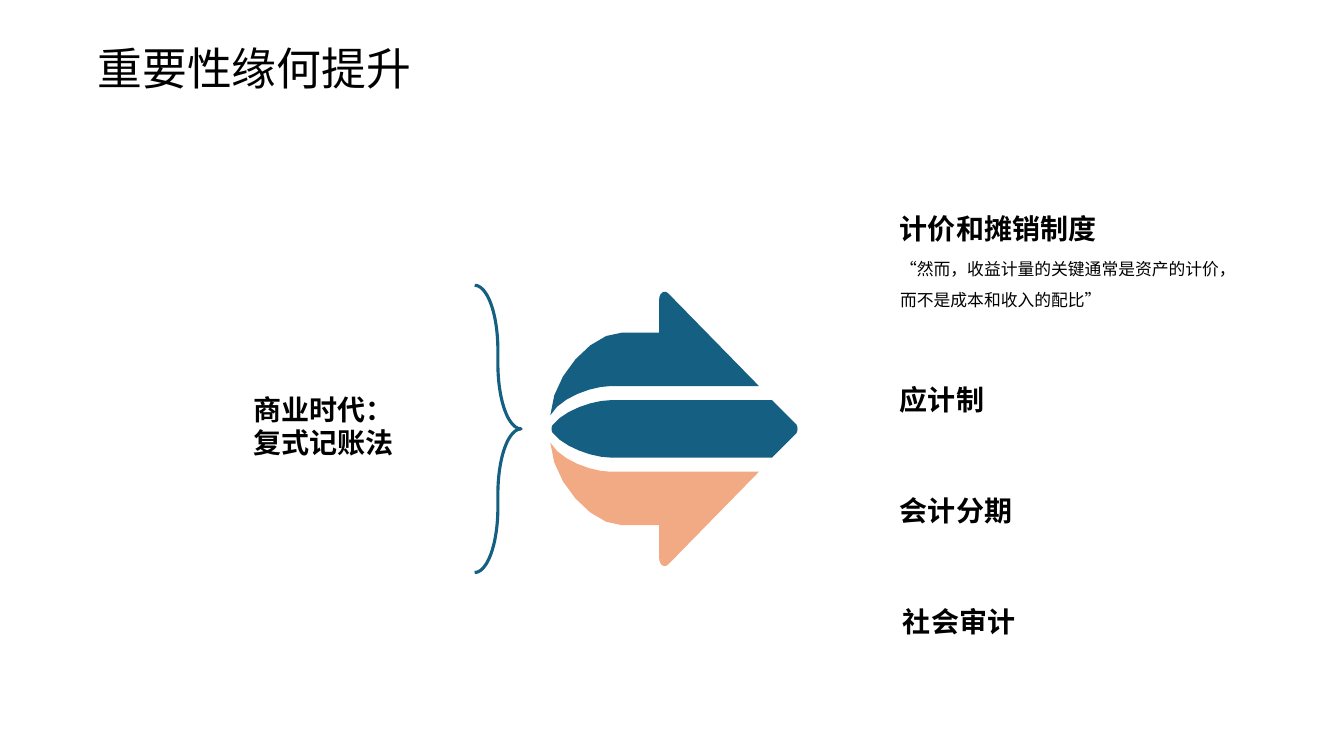
from lxml import etree
from pptx import Presentation
from pptx import util as u
from pptx.dml.color import RGBColor
from pptx.enum import shapes, text
from pptx.oxml import ns

BLUE, PEACH, BLACK = "156082", "F2AA84", "000000"
CURVE_STEPS = 6


def rgb(value):
    return RGBColor.from_string(value)


def outline(start, *steps):
    """Turn points (lines) and point triples (Bezier curves) into a list of points."""
    points = [start]
    for step in steps:
        if not isinstance(step[0], tuple):
            points.append(step)
            continue
        p0, (p1, p2, p3) = points[-1], step
        for i in range(1, CURVE_STEPS + 1):
            t = i / CURVE_STEPS
            points.append(tuple(
                (1 - t) ** 3 * a + 3 * (1 - t) ** 2 * t * b
                + 3 * (1 - t) * t ** 2 * c + t ** 3 * d
                for a, b, c, d in zip(p0, p1, p2, p3)))
    return points


def mirror(points, axis):
    return [(x, 2 * axis - y) for x, y in points]


class Page:
    font = "Noto Sans CJK SC"

    def __init__(self, prs):
        self.s = prs.slides.add_slide(prs.slide_layouts[6])

    def text(self, lines, x, y, w, h, size=20, bold=True, align=text.PP_ALIGN.LEFT,
             anchor=text.MSO_ANCHOR.MIDDLE, insets=(0.1, 0.05), spacing=None, gap=None):
        sp = self.s.shapes.add_textbox(*map(u.Inches, (x, y, w, h)))
        tf = sp.text_frame
        tf.word_wrap = True
        tf.vertical_anchor = anchor
        tf.margin_left = tf.margin_right = u.Inches(insets[0])
        tf.margin_top = tf.margin_bottom = u.Inches(insets[1])
        tf.text = "\n".join(lines)
        for p in tf.paragraphs:
            p.alignment = align
            if spacing:
                p.line_spacing = spacing
            if gap:
                p.space_before = p.space_after = u.Pt(gap)
            p.font.size = u.Pt(size)
            p.font.bold = bold
            p.font.name = self.font
            p.font.color.rgb = rgb(BLACK)
            # East Asian typeface
            props = p._p.pPr.find(ns.qn("a:defRPr"))
            etree.SubElement(props, ns.qn("a:ea")).set("typeface", self.font)

    def group(self):
        return self.s.shapes.add_group_shape()

    def freeform(self, group, points, fill):
        points = [(u.Inches(x), u.Inches(y)) for x, y in points]
        builder = group.shapes.build_freeform(*points[0])
        builder.add_line_segments(points[1:], close=True)
        sp = builder.convert_to_shape()
        sp.shadow.inherit = False
        sp.fill.solid()
        sp.fill.fore_color.rgb = rgb(fill)
        sp.line.fill.background()

    def brace(self, x, y, w, h, curl):
        sp = self.s.shapes.add_shape(shapes.MSO_SHAPE.RIGHT_BRACE,
                                     *map(u.Inches, (x, y, w, h)))
        sp.shadow.inherit = False
        sp.fill.background()
        sp.line.color.rgb = rgb(BLUE)
        sp.line.width = u.Pt(2.25)
        sp.adjustments[0] = curl


def main():
    prs = Presentation()
    prs.slide_width, prs.slide_height = u.Inches(40 / 3), u.Inches(7.5)
    page = Page(prs)

    # Three-part arrow, symmetric about its axis
    axis = 4.255
    wing = outline(
        (6.06, 3.83), (7.53, 3.83), (6.63, 2.91),
        ((6.59, 2.87), (6.54, 2.91), (6.54, 2.97)),
        (6.54, 3.3), (6.17, 3.3),
        ((5.87, 3.3), (5.48, 3.73), (5.46, 4.12)),
        ((5.56, 3.94), (5.88, 3.83), (6.06, 3.83)))
    core = outline(
        (7.89, 4.2), (7.66, 3.97), (6.06, 3.97),
        ((5.89, 3.97), (5.59, 4.07), (5.48, 4.22)),
        ((5.47, 4.24), (5.47, 4.27), (5.48, 4.29)),
        ((5.59, 4.44), (5.89, 4.54), (6.06, 4.54)),
        (7.66, 4.54), (7.89, 4.31),
        ((7.92, 4.29), (7.92, 4.22), (7.89, 4.2)))
    arrow = page.group()
    page.freeform(arrow, wing, BLUE)
    page.freeform(arrow, mirror(wing, axis), PEACH)
    page.freeform(arrow, core, BLUE)

    # Cause on the left
    page.text(["商业时代：", "复式记账法"], 1.02, 3.98, 2.98, 0.49,
              align=text.PP_ALIGN.RIGHT)
    page.brace(4.71, 2.83, 0.46, 2.85, 1.404)

    # Effects on the right
    for label, x, y, w in [("计价和摊销制度", 8.83, 2.02, 2.65),
                           ("应计制", 8.83, 3.72, 1.51),
                           ("会计分期", 8.83, 4.82, 1.51),
                           ("社会审计", 8.86, 5.92, 1.51)]:
        page.text([label], x, y, w, 0.49)
    page.text(["“然而，收益计量的关键通常是资产的计价，而不是成本和收入的配比”"],
              8.86, 2.44, 3.32, 0.67, size=12, bold=False,
              anchor=text.MSO_ANCHOR.TOP, insets=(0.07, 0.03), spacing=1.5)

    # Title
    page.text(["重要性缘何提升"], 0.62, 0.4, 3.81, 0.54, size=32, bold=False,
              align=text.PP_ALIGN.CENTER, anchor=text.MSO_ANCHOR.TOP,
              insets=(0, 0), gap=5)

    prs.save("out.pptx")


if __name__ == "__main__":
    main()
